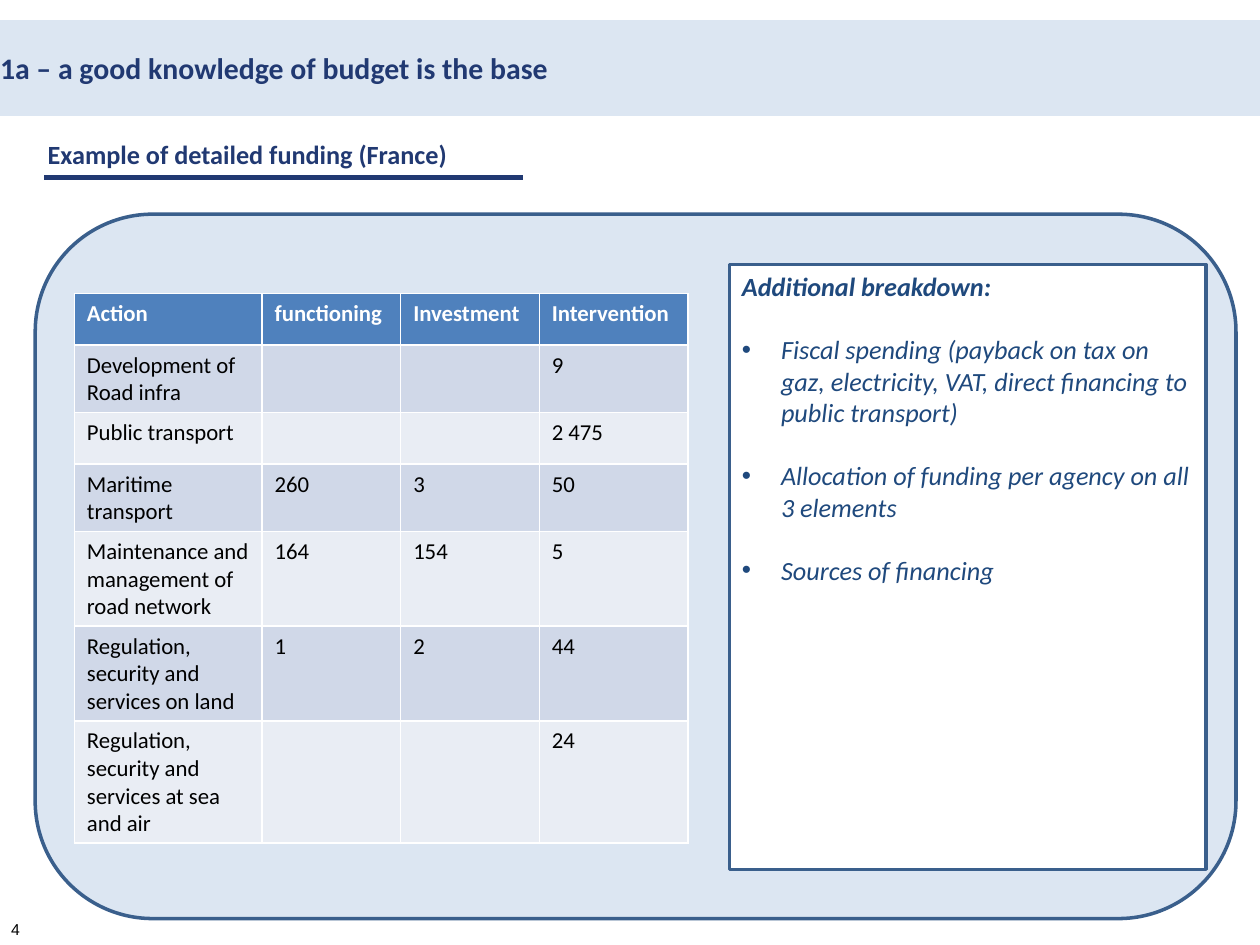
from pptx import Presentation
from pptx import util as u
from pptx.dml.color import RGBColor
from pptx.enum import shapes, text
from pptx.oxml.ns import qn
from lxml import etree

NAVY, BLUE, PALE, EDGE = "213972", "1F497D", "DCE6F2", "3A5F8C"
Inches = u.Inches


def paint(part, tone):
    part.solid()
    part.fore_color.rgb = RGBColor.from_string(tone)


def write(para, words, size=15, tone=NAVY, bold=False, italic=False, font="Calibri"):
    run = para.add_run()
    run.text = words
    run.font.size = u.Pt(size)
    run.font.name = font
    run.font.bold = bold
    run.font.italic = italic
    paint(run.font.fill, tone)


deck = Presentation()
deck.slide_width, deck.slide_height = Inches(10), Inches(7.5)
slide = deck.slides.add_slide(deck.slide_layouts[5])
items = slide.shapes

# Title band
title = items.title
title.left, title.top = Inches(0), Inches(0.16)
title.width, title.height = Inches(10), Inches(0.76)
paint(title.fill, PALE)
frame = title.text_frame
frame.auto_size = text.MSO_AUTO_SIZE.NONE
frame.vertical_anchor = text.MSO_ANCHOR.MIDDLE
frame.margin_left = frame.margin_right = frame.margin_top = frame.margin_bottom = 0
frame.paragraphs[0].alignment = text.PP_ALIGN.LEFT
write(frame.paragraphs[0], "1a – a good knowledge of budget is the base", size=17, bold=True)

# Page number
page = items.add_textbox(Inches(-0.01), Inches(7.13), Inches(0.48), Inches(0.37)).text_frame
page.word_wrap = True
page.vertical_anchor = text.MSO_ANCHOR.BOTTOM
write(page.paragraphs[0], "4", size=9, tone="000000", font="Arial")

# Rounded panel and the white box on it
panels = []
for kind, tone, area in (
    (shapes.MSO_SHAPE.ROUNDED_RECTANGLE, PALE, (0.28, 1.7, 9.53, 5.59)),
    (shapes.MSO_SHAPE.RECTANGLE, "FFFFFF", (5.79, 2.1, 3.78, 4.8)),
):
    panel = items.add_shape(kind, *map(Inches, area))
    panel.shadow.inherit = False
    paint(panel.fill, tone)
    paint(panel.line.fill, EDGE)
    panel.line.width = u.Pt(2)
    panels.append(panel)

# Underlined heading
head = items.add_textbox(Inches(0.28), Inches(1.05), Inches(3.39), Inches(0.35)).text_frame
write(head.paragraphs[0], "Example of detailed funding (France)", bold=True)
rule = items.add_connector(
    shapes.MSO_CONNECTOR.STRAIGHT, Inches(0.35), Inches(1.41), Inches(4.15), Inches(1.41))
paint(rule.line.fill, NAVY)
rule.line.width = u.Pt(3)
etree.SubElement(rule._element.spPr, qn("a:effectLst"))

# Funding table
rows = [
    ("Action", "functioning", "Investment", "Intervention"),
    ("Development of Road infra", "", "", "9"),
    ("Public transport", "", "", "2 475"),
    ("Maritime transport", "260", "3", "50"),
    ("Maintenance and management of road network", "164", "154", "5"),
    ("Regulation, security and services on land", "1", "2", "44"),
    ("Regulation, security and services at sea and air", "", "", "24"),
]
table = items.add_table(
    len(rows), 4, Inches(0.59), Inches(2.33), Inches(4.88), Inches(2.87)).table
for col, width in zip(table.columns, (1.49, 1.1, 1.1, 1.18)):
    col.width = Inches(width)
for r, row in enumerate(rows):
    table.rows[r].height = Inches(0.41)
    fill = "4F81BD" if r == 0 else ("E9EDF4", "D0D8E8")[r % 2]
    for c, words in enumerate(row):
        cell = table.cell(r, c)
        paint(cell.fill, fill)
        if words:
            write(cell.text_frame.paragraphs[0], words, size=13, bold=r == 0,
                  tone="000000" if r else "FFFFFF")

# Additional breakdown
notes = panels[1].text_frame
notes.word_wrap = True
notes.vertical_anchor = text.MSO_ANCHOR.TOP
para = notes.paragraphs[0]
para.alignment = text.PP_ALIGN.LEFT
write(para, "Additional breakdown:", tone=BLUE, bold=True, italic=True)
for words in (
    "Fiscal spending (payback on tax on gaz, electricity, VAT, direct financing to public transport)",
    "Allocation of funding per agency on all 3 elements",
    "Sources of financing",
):
    para = notes.add_paragraph()
    para.alignment = text.PP_ALIGN.LEFT
    para.space_before = u.Pt(18)
    props = para._p.get_or_add_pPr()
    props.set("marL", str(Inches(0.31)))
    props.set("indent", str(Inches(-0.31)))
    etree.SubElement(props, qn("a:buFont"), typeface="Arial")
    etree.SubElement(props, qn("a:buChar"), char="•")
    write(para, words, tone=BLUE, italic=True)

deck.save("out.pptx")
